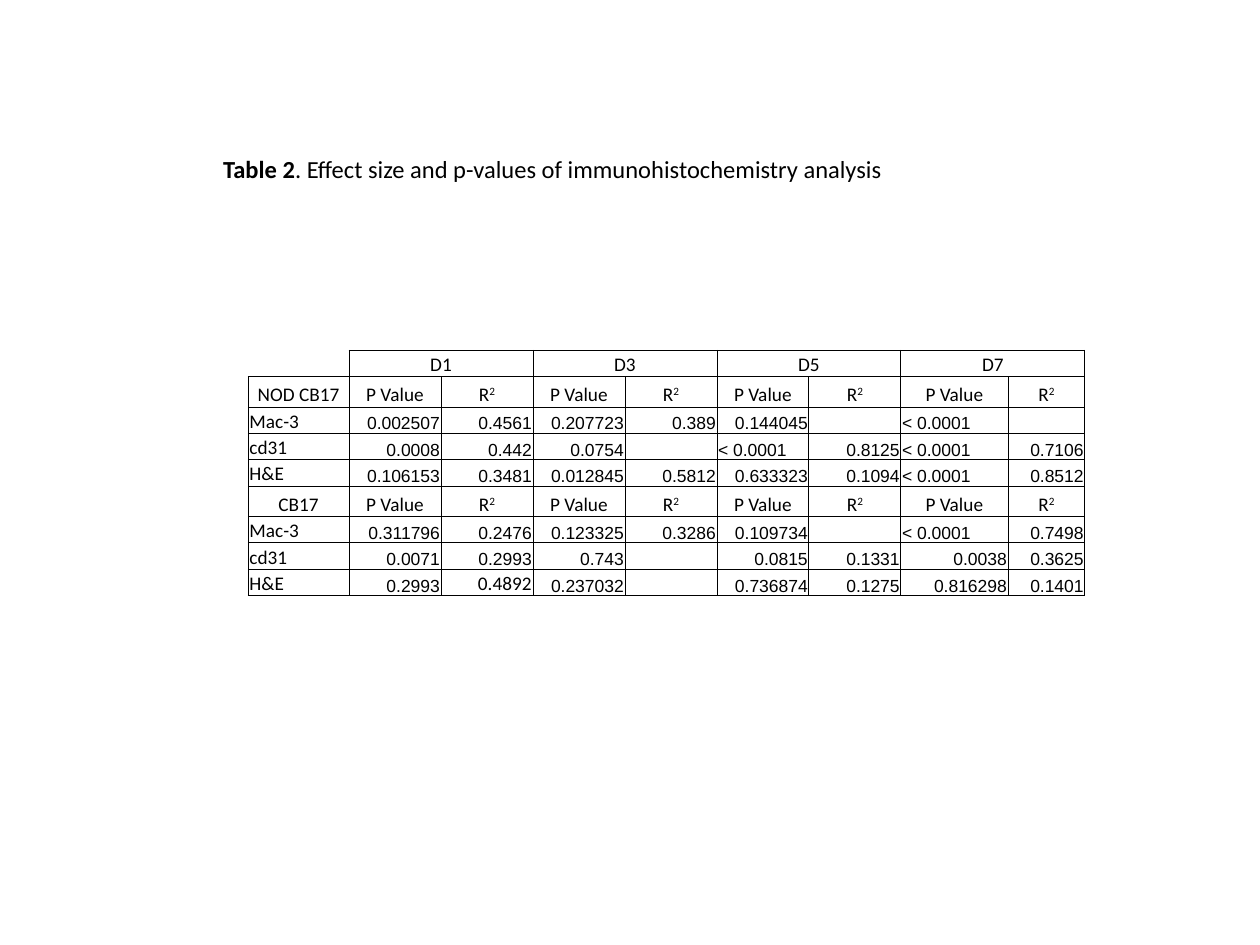
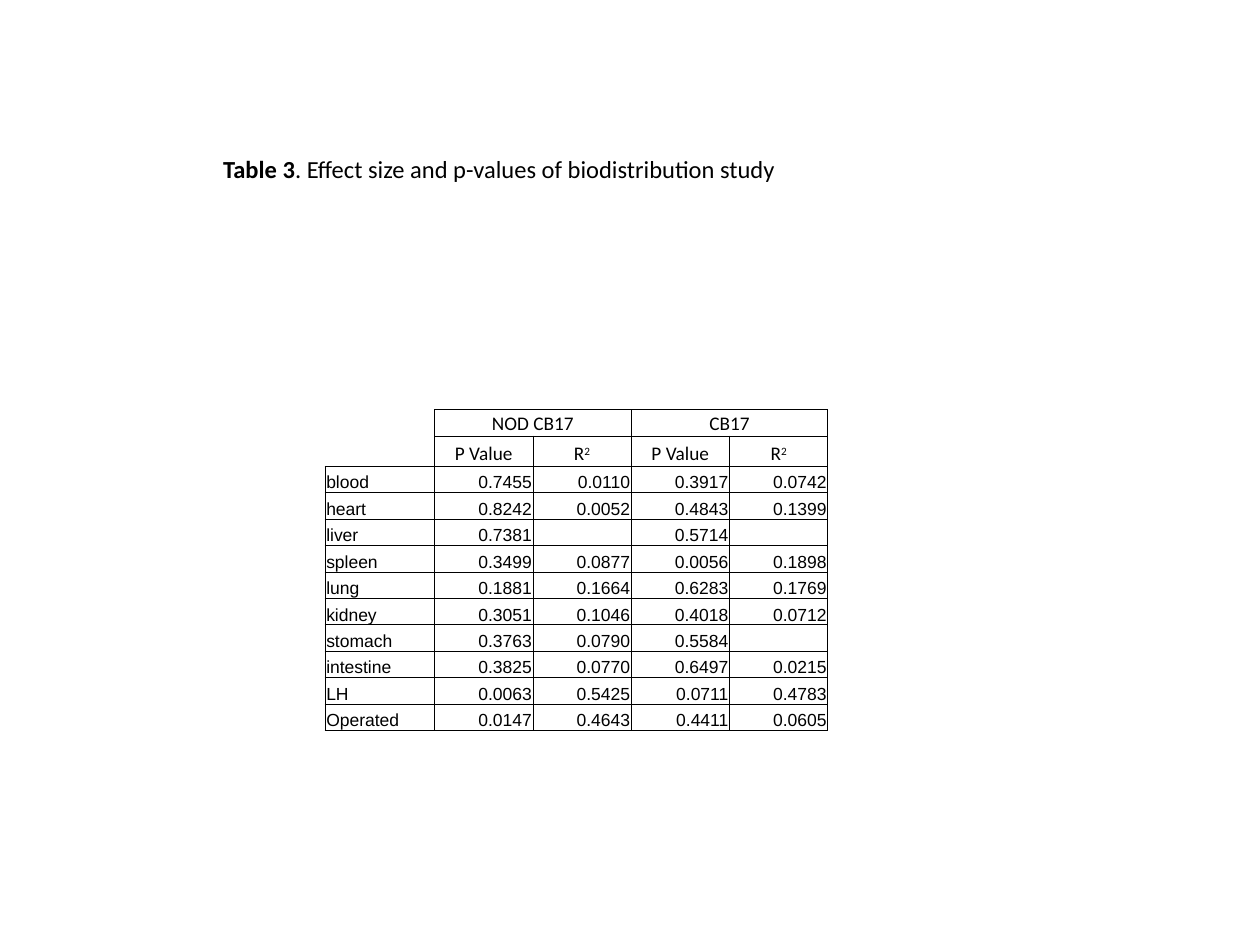
from dataclasses import dataclass

from lxml import etree
from pptx import Presentation
from pptx import util as u
from pptx.dml.color import RGBColor
from pptx.enum import text
from pptx.oxml.ns import qn


@dataclass(frozen=True)
class Theme:
    ink: str = "000000"
    heading_font: str = "Calibri"
    number_font: str = "Arial"
    caption_size: int = 14
    heading_size: int = 11
    number_size: int = 10
    border_width: float = 0.5
    plain_table_style: str = "{2D5ABB26-0587-4C30-8999-92F81FD0307C}"


@dataclass(frozen=True)
class Cell:
    text: str = ""
    align: str = "left"
    heading: bool = False
    superscript: str = ""
    span: int = 1


THEME = Theme()
ALIGNMENTS = {
    "left": text.PP_ALIGN.LEFT,
    "center": text.PP_ALIGN.CENTER,
    "right": text.PP_ALIGN.RIGHT,
    "justify": text.PP_ALIGN.JUSTIFY,
}
ROW_HEIGHT = 0.21
HEADER_HEIGHT = 0.24

NOD_RESULTS = {
    "Mac-3": ["0.002507", "0.4561", "0.207723", "0.389", "0.144045", "", "< 0.0001", ""],
    "cd31": ["0.0008", "0.442", "0.0754", "", "< 0.0001", "0.8125", "< 0.0001", "0.7106"],
    "H&E": ["0.106153", "0.3481", "0.012845", "0.5812", "0.633323", "0.1094", "< 0.0001", "0.8512"],
}
CB17_RESULTS = {
    "Mac-3": ["0.311796", "0.2476", "0.123325", "0.3286", "0.109734", "", "< 0.0001", "0.7498"],
    "cd31": ["0.0071", "0.2993", "0.743", "", "0.0815", "0.1331", "0.0038", "0.3625"],
    "H&E": ["0.2993", Cell("0.4892", "right", heading=True), "0.237032", "",
            "0.736874", "0.1275", "0.816298", "0.1401"],
}
ORGAN_RESULTS = {
    "blood": ["0.7455", "0.0110", "0.3917", "0.0742"],
    "heart": ["0.8242", "0.0052", "0.4843", "0.1399"],
    "liver": ["0.7381", "", "0.5714", ""],
    "spleen": ["0.3499", "0.0877", "0.0056", "0.1898"],
    "lung": ["0.1881", "0.1664", "0.6283", "0.1769"],
    "kidney": ["0.3051", "0.1046", "0.4018", "0.0712"],
    "stomach": ["0.3763", "0.0790", "0.5584", ""],
    "intestine": ["0.3825", "0.0770", "0.6497", "0.0215"],
    "LH": ["0.0063", "0.5425", "0.0711", "0.4783"],
    "Operated": ["0.0147", "0.4643", "0.4411", "0.0605"],
}


def write_text(paragraph, content, *, font, size, align="left", bold=False, superscript=False):
    paragraph.alignment = ALIGNMENTS[align]
    if not content:
        paragraph._p.get_or_add_endParaRPr().set("sz", str(size * 100))
        return
    run = paragraph.add_run()
    run.text = content
    run.font.name = font
    run.font.size = u.Pt(size)
    run.font.bold = bold
    run.font.color.rgb = RGBColor.from_string(THEME.ink)
    if superscript:
        run.font._element.set("baseline", "30000")


def add_caption(slide, label, description):
    caption = slide.shapes.title
    caption.left, caption.top = u.Inches(1.67), u.Inches(1.17)
    caption.width, caption.height = u.Inches(5.67), u.Inches(0.34)
    frame = caption.text_frame
    frame.word_wrap = True
    frame.auto_size = text.MSO_AUTO_SIZE.SHAPE_TO_FIT_TEXT
    frame.vertical_anchor = text.MSO_ANCHOR.TOP
    for content, bold in ((label, True), (f". {description}", False)):
        write_text(frame.paragraphs[0], content, font=THEME.heading_font,
                   size=THEME.caption_size, align="justify", bold=bold)


def group_row(names):
    row = [Cell()]
    for name in names:
        row += [Cell(name, "center", heading=True, span=2), None]
    return row


def measure_row(label, group_count):
    measures = [Cell("P Value", "center", heading=True),
                Cell("R", "center", heading=True, superscript="2")]
    return [Cell(label, "center", heading=True)] + measures * group_count


def number_cell(value):
    if isinstance(value, Cell):
        return value
    return Cell(value, "left" if value.startswith("<") else "right")


def result_rows(results, heading_labels=False):
    return [[Cell(label, heading=heading_labels)] + [number_cell(value) for value in values]
            for label, values in results.items()]


def draw_borders(table_cell, sides):
    properties = table_cell._tc.get_or_add_tcPr()
    for side in "LRTB":
        line = etree.SubElement(properties, qn(f"a:ln{side}"))
        if side in sides:
            line.set("w", str(u.Pt(THEME.border_width)))
            fill = etree.SubElement(line, qn("a:solidFill"))
            etree.SubElement(fill, qn("a:srgbClr"), val=THEME.ink)
        else:
            etree.SubElement(line, qn("a:noFill"))


def border_sides(rows, row_index, column_index):
    cell = rows[row_index][column_index]
    if column_index or cell.text:
        return "LRTB"
    return "RB" if rows[row_index + 1][0].text else "R"


def fill_cell(table_cell, cell):
    table_cell.margin_left = table_cell.margin_right = table_cell.margin_top = u.Inches(0.01)
    table_cell.margin_bottom = 0
    table_cell.vertical_anchor = text.MSO_ANCHOR.BOTTOM
    font = THEME.heading_font if cell.heading else THEME.number_font
    size = THEME.heading_size if cell.heading else THEME.number_size
    paragraph = table_cell.text_frame.paragraphs[0]
    write_text(paragraph, cell.text, font=font, size=size, align=cell.align)
    if cell.superscript:
        write_text(paragraph, cell.superscript, font=font, size=size,
                   align=cell.align, superscript=True)


def add_results_table(slide, left, top, column_widths, rows):
    heights = [HEADER_HEIGHT if row[1].text == "P Value" else ROW_HEIGHT for row in rows]
    frame = slide.shapes.add_table(
        len(rows), len(column_widths), u.Inches(left), u.Inches(top),
        u.Inches(sum(column_widths)), u.Inches(sum(heights)))
    table = frame.table
    table.first_row = table.horz_banding = False
    table._tbl.tblPr.find(qn("a:tableStyleId")).text = THEME.plain_table_style
    for column, width in zip(table.columns, column_widths):
        column.width = u.Inches(width)
    for row, height in zip(table.rows, heights):
        row.height = u.Inches(height)
    for row_index, row in enumerate(rows):
        for column_index, cell in enumerate(row):
            table_cell = table.cell(row_index, column_index)
            draw_borders(table_cell, border_sides(rows, row_index, column_index))
            table_cell.fill.background()
            fill_cell(table_cell, cell or Cell())
            if cell and cell.span > 1:
                table_cell.merge(table.cell(row_index, column_index + cell.span - 1))


def add_table_slide(presentation, label, description, **table_format):
    slide = presentation.slides.add_slide(presentation.slide_layouts.get_by_name("Title Only"))
    add_caption(slide, label, description)
    add_results_table(slide, **table_format)


def main():
    presentation = Presentation()
    presentation.slide_width, presentation.slide_height = u.Inches(10), u.Inches(7.5)

    days = ["D1", "D3", "D5", "D7"]
    add_table_slide(
        presentation, "Table 2", "Effect size and p-values of immunohistochemistry analysis",
        left=1.97, top=2.78, column_widths=[0.8] + [0.73] * 6 + [0.85, 0.61],
        rows=[group_row(days),
              measure_row("NOD CB17", len(days)), *result_rows(NOD_RESULTS, heading_labels=True),
              measure_row("CB17", len(days)), *result_rows(CB17_RESULTS, heading_labels=True)])

    strains = ["NOD CB17", "CB17"]
    add_table_slide(
        presentation, "Table 3", "Effect size and p-values of biodistribution study",
        left=2.58, top=3.25, column_widths=[0.87] + [0.78] * 4,
        rows=[group_row(strains), measure_row("", len(strains)), *result_rows(ORGAN_RESULTS)])

    presentation.save("out.pptx")


if __name__ == "__main__":
    main()
